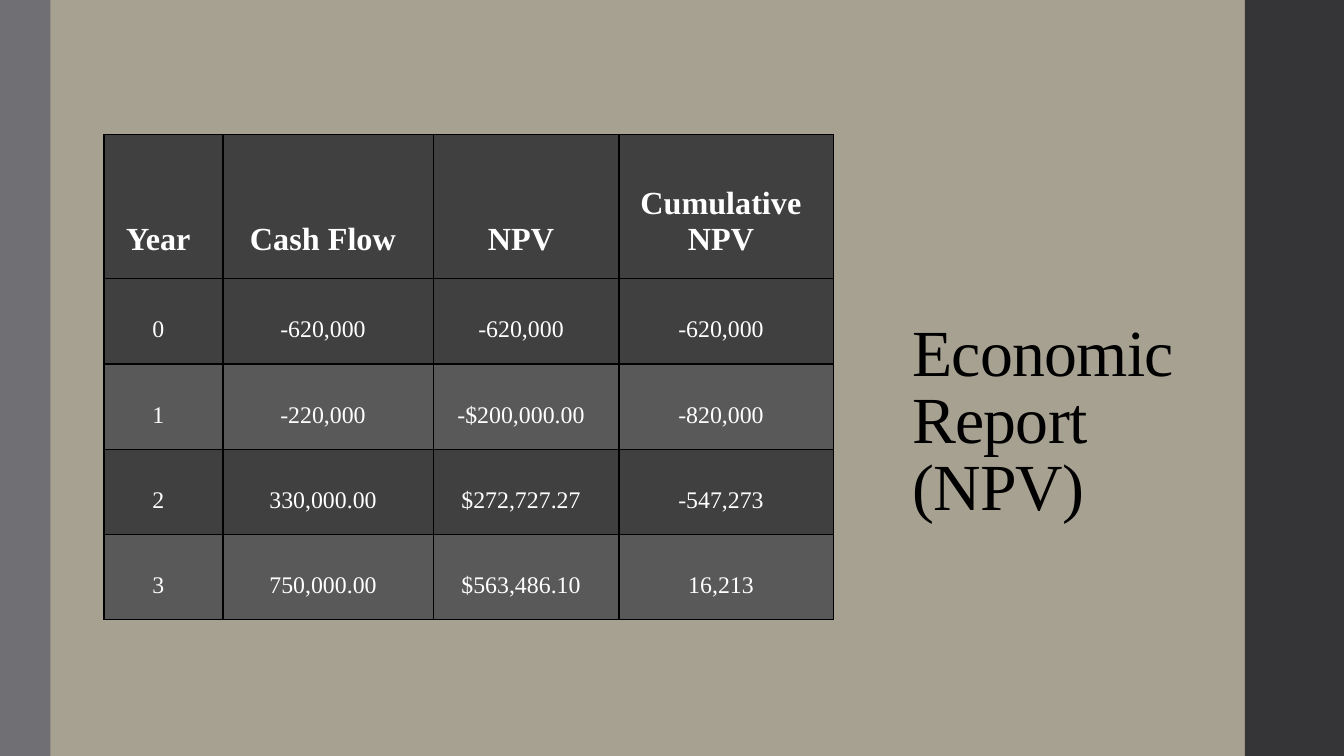
from lxml import etree
from pptx import Presentation
from pptx.dml.color import RGBColor
from pptx.enum.shapes import MSO_SHAPE
from pptx.enum.text import MSO_ANCHOR, MSO_AUTO_SIZE, PP_ALIGN
from pptx.oxml.ns import qn
from pptx.util import Cm, Pt

RECTANGLE = MSO_SHAPE.RECTANGLE
BOTTOM = MSO_ANCHOR.BOTTOM
NO_AUTOFIT = MSO_AUTO_SIZE.NONE
LEFT, CENTER = PP_ALIGN.LEFT, PP_ALIGN.CENTER

TITLE = "Economic Report (NPV)"
CASH_FLOWS = [
    ("Year", "Cash Flow", "NPV", "Cumulative NPV"),
    ("0", "-620,000", "-620,000", "-620,000"),
    ("1", "-220,000", "-$200,000.00", "-820,000"),
    ("2", "330,000.00", "$272,727.27", "-547,273"),
    ("3", "750,000.00", "$563,486.10", "16,213"),
]
COLUMN_WIDTHS = (3, 5.3, 4.68, 5.4)
HEADER_HEIGHT, ROW_HEIGHT = 3.63, 2.15
SLIDE_WIDTH, SLIDE_HEIGHT = 33.87, 19.05
SIDE_BARS = [(0, 1.27, "6F6F74"), (31.37, 2.5, "353537")]
FONT = "Times New Roman"
DARK, LIGHT = "404040", "595959"


def color(value):
    return RGBColor.from_string(value)


def style_paragraph(para, size, value, align, bold=False):
    para.alignment = align
    para.font.name = FONT
    para.font.size = Pt(size)
    para.font.bold = bold
    para.font.color.rgb = color(value)


def add_borders(cell):
    properties = cell._tc.get_or_add_tcPr()
    for side in ("a:lnL", "a:lnR", "a:lnT", "a:lnB"):
        line = etree.SubElement(properties, qn(side), w=str(Pt(1)))
        fill = etree.SubElement(line, qn("a:solidFill"))
        etree.SubElement(fill, qn("a:srgbClr"), val="000000")


def add_side_bar(page, left, width, value):
    bar = page.shapes.add_shape(RECTANGLE, Cm(left), 0, Cm(width), Cm(SLIDE_HEIGHT))
    bar.shadow.inherit = False
    bar.fill.solid()
    bar.fill.fore_color.rgb = color(value)
    bar.line.fill.background()


def place_title(page):
    title = page.shapes.title
    title.left, title.top = Cm(22.73), Cm(2.11)
    title.width, title.height = Cm(7.92), Cm(11.23)
    frame = title.text_frame
    frame.text = TITLE
    frame.word_wrap = True
    frame.auto_size = NO_AUTOFIT
    frame.vertical_anchor = BOTTOM
    para = frame.paragraphs[0]
    para.line_spacing = 0.85
    style_paragraph(para, 47, "000000", LEFT)
    para.runs[0].font._element.set("spc", "-50")


def fill_cell(cell, text, row):
    cell.text = text
    cell.vertical_anchor = BOTTOM
    cell.margin_left, cell.margin_right = Cm(0.25), Cm(0.51)
    cell.margin_top, cell.margin_bottom = Cm(0.08), Cm(0.53)
    header = row == 0
    style_paragraph(cell.text_frame.paragraphs[0], 23 if header else 17,
                    "FFFFFF", CENTER, header)
    add_borders(cell)
    cell.fill.solid()
    cell.fill.fore_color.rgb = color(LIGHT if row and row % 2 == 0 else DARK)


def add_cash_flow_table(page):
    heights = [HEADER_HEIGHT] + [ROW_HEIGHT] * (len(CASH_FLOWS) - 1)
    table = page.shapes.add_table(
        len(heights), len(COLUMN_WIDTHS), Cm(2.62), Cm(3.39),
        Cm(sum(COLUMN_WIDTHS)), Cm(sum(heights))).table
    for column, width in zip(table.columns, COLUMN_WIDTHS):
        column.width = Cm(width)
    for row, (height, values) in enumerate(zip(heights, CASH_FLOWS)):
        table.rows[row].height = Cm(height)
        for column, text in enumerate(values):
            fill_cell(table.cell(row, column), text, row)


def main():
    deck = Presentation()
    deck.slide_width, deck.slide_height = Cm(SLIDE_WIDTH), Cm(SLIDE_HEIGHT)
    page = deck.slides.add_slide(deck.slide_layouts.get_by_name("Title Only"))
    page.background.fill.solid()
    page.background.fill.fore_color.rgb = color("A7A192")
    for left, width, value in SIDE_BARS:
        add_side_bar(page, left, width, value)
    place_title(page)
    add_cash_flow_table(page)
    deck.save("out.pptx")


if __name__ == "__main__":
    main()
